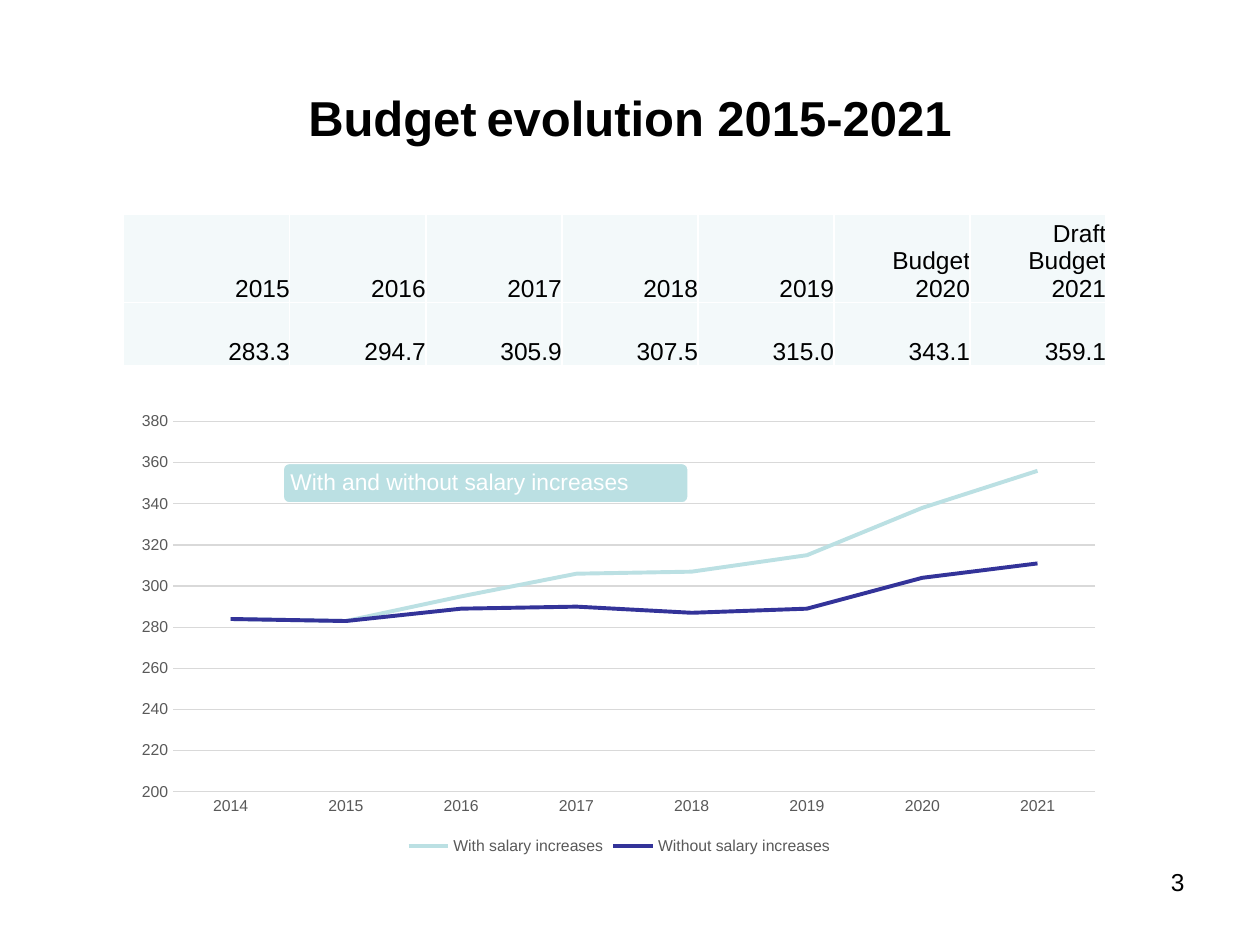
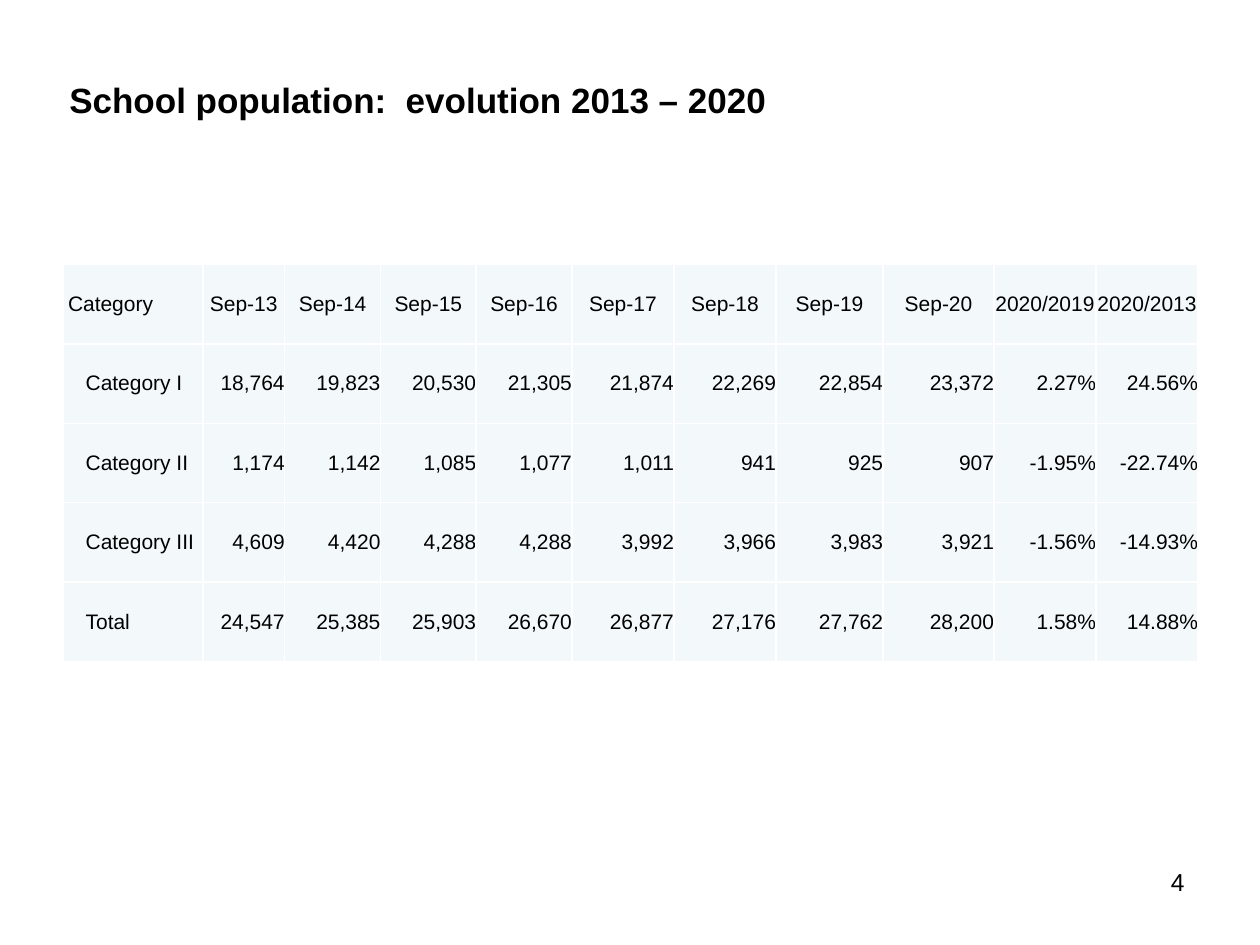
from lxml.etree import SubElement as Sub
from pptx import Presentation
from pptx.chart.data import CategoryChartData as Data
from pptx.dml.color import RGBColor
from pptx.enum.chart import XL_CHART_TYPE as Kind, XL_LEGEND_POSITION as Spot, XL_TICK_MARK as Tick
from pptx.enum.shapes import MSO_SHAPE as Form
from pptx.enum.text import MSO_ANCHOR as Anchor, PP_ALIGN as Align
from pptx.oxml import parse_xml
from pptx.oxml.ns import nsdecls, qn
from pptx.util import Inches, Pt

WIDE, HIGH = 10, 7.5
EDGE = WIDE / 20
FULL = WIDE - 2 * EDGE
FONT = "Arial"
INK, GREY, RULE, WHITE = "000000", "595959", "D9D9D9", "FFFFFF"
TINT, AQUA, NAVY = "F3F9FA", "BBE0E3", "333399"

BUDGET = [
    ["2015", "2016", "2017", "2018", "2019", "Budget 2020", "Draft Budget\n2021"],
    ["283.3", "294.7", "305.9", "307.5", "315.0", "343.1", "359.1"],
]
BADGE = "With and without salary increases"
YEARS = [str(year) for year in range(2014, 2022)]
LINES = [
    ("With salary increases", AQUA, [284, 283, 295, 306, 307, 315, 338, 356]),
    ("Without salary increases", NAVY, [284, 283, 289, 290, 287, 289, 304, 311]),
]
PUPILS = [
    ["Category", *[f"Sep-{year}" for year in range(13, 21)], "2020/2019", "2020/2013"],
    ["Category I", "18,764", "19,823", "20,530", "21,305", "21,874", "22,269",
     "22,854", "23,372", "2.27%", "24.56%"],
    ["Category II", "1,174", "1,142", "1,085", "1,077", "1,011", "941",
     "925", "907", "-1.95%", "-22.74%"],
    ["Category III", "4,609", "4,420", "4,288", "4,288", "3,992", "3,966",
     "3,983", "3,921", "-1.56%", "-14.93%"],
    ["Total", "24,547", "25,385", "25,903", "26,670", "26,877", "27,176",
     "27,762", "28,200", "1.58%", "14.88%"],
]
PLOT = {"x": 0.05, "y": 0.04, "w": 0.93, "h": 0.81}


def hue(code):
    return RGBColor.from_string(code)


def put(item, **attrs):
    for name, value in attrs.items():
        setattr(item, name, value)


def style(font, size, color=INK, bold=False):
    put(font, name=FONT, size=Pt(size), bold=bold)
    font.color.rgb = hue(color)


def box(slide, rect, runs, align, anchor, bold=False, **attrs):
    frame = slide.shapes.add_textbox(*map(Inches, rect)).text_frame
    put(frame, word_wrap=True, vertical_anchor=anchor, **attrs)
    para = frame.paragraphs[0]
    para.alignment = align
    for text, size in runs:
        run = para.add_run()
        run.text = text
        style(run.font, size, bold=bold)


def page(deck, number):
    slide = deck.slides.add_slide(deck.slide_layouts[6])
    slide.background.fill.solid()
    slide.background.fill.fore_color.rgb = hue(WHITE)
    box(slide, (7.17, 6.83, 2.33, 0.52), [(str(number), 14)], Align.RIGHT, Anchor.TOP)
    return slide


def border(cell):
    props = cell._tc.get_or_add_tcPr()
    for at, side in enumerate(("lnL", "lnR", "lnT", "lnB")):
        props.insert(at, parse_xml(
            f'<a:{side} {nsdecls("a")} w="12700"><a:solidFill>'
            f'<a:srgbClr val="{WHITE}"/></a:solidFill></a:{side}>'))


def grid(slide, left, top, cols, rows, cells, size, anchor, place):
    table = slide.shapes.add_table(
        len(rows), len(cols), *map(Inches, (left, top, sum(cols), sum(rows)))).table
    put(table, first_row=False, horz_banding=False)
    for col, width in zip(table.columns, cols):
        col.width = Inches(width)
    for r, (row, height) in enumerate(zip(cells, rows)):
        table.rows[r].height = Inches(height)
        for c, text in enumerate(row):
            cell = table.cell(r, c)
            align, inset = place(r, c)
            put(cell, text=text, vertical_anchor=anchor, margin_left=Inches(inset),
                margin_right=0, margin_top=0, margin_bottom=0)
            for para in cell.text_frame.paragraphs:
                para.alignment = align
                style(para.runs[0].font, size)
            cell.fill.solid()
            cell.fill.fore_color.rgb = hue(TINT)
            border(cell)


def badge(slide):
    shape = slide.shapes.add_shape(
        Form.ROUNDED_RECTANGLE, *map(Inches, (2.24, 3.67, 3.23, 0.33)))
    shape.shadow.inherit = False
    shape.fill.solid()
    shape.fill.fore_color.rgb = hue(AQUA)
    shape.line.color.rgb = hue(WHITE)
    shape.line.width = Pt(2)
    frame = shape.text_frame
    put(frame, text=BADGE, word_wrap=True, vertical_anchor=Anchor.MIDDLE,
        margin_left=Inches(0.05), margin_right=0, margin_top=0, margin_bottom=0)
    para = frame.paragraphs[0]
    put(para, alignment=Align.LEFT, line_spacing=0.9)
    style(para.runs[0].font, 13, WHITE)


def trend(slide):
    data = Data()
    data.categories = YEARS
    for name, color, values in LINES:
        data.add_series(name, values)
    chart = slide.shapes.add_chart(
        Kind.LINE, *map(Inches, (0.98, 3.2, 7.87, 3.63)), data).chart
    style(chart.font, 10)
    put(chart, has_title=False, has_legend=True)
    put(chart.legend, position=Spot.BOTTOM, include_in_layout=False)
    style(chart.legend.font, 9, GREY)
    chart.plots[0].vary_by_categories = False
    for series, (name, color, values) in zip(chart.plots[0].series, LINES):
        series.smooth = False
        series.format.line.color.rgb = hue(color)
        series.format.line.width = Pt(2.25)
    years, scale = chart.category_axis, chart.value_axis
    for axis in (years, scale):
        put(axis, major_tick_mark=Tick.NONE, minor_tick_mark=Tick.NONE)
        style(axis.tick_labels.font, 9, GREY)
    put(scale, minimum_scale=200, maximum_scale=380, major_unit=20)
    scale.format.line.fill.background()
    for line in (years.format.line, scale.major_gridlines.format.line):
        line.color.rgb = hue(RULE)
        line.width = Pt(0.75)
    root = chart._chartSpace.find(qn("c:chart"))
    root.addnext(parse_xml(
        f'<c:spPr {nsdecls("c", "a")}><a:noFill/><a:ln><a:noFill/></a:ln></c:spPr>'))
    area = root.find(qn("c:plotArea"))
    for old in area.findall(qn("c:layout")):
        area.remove(old)
    layout = parse_xml(f'<c:layout {nsdecls("c")}><c:manualLayout/></c:layout>')
    area.insert(0, layout)
    marks = {"layoutTarget": "inner", "xMode": "edge", "yMode": "edge", **PLOT}
    for tag, value in marks.items():
        Sub(layout[0], qn(f"c:{tag}")).set("val", str(value))


def budget(deck):
    slide = page(deck, 3)
    box(slide, (EDGE, 0.3, FULL, 1.25),
        [("Budget", 28), (" ", 20), ("evolution 2015-2021", 28)],
        Align.CENTER, Anchor.MIDDLE, True)
    badge(slide)
    trend(slide)
    grid(slide, 0.98, 1.7, [1.32] + [1.08] * 6, [0.65, 0.5], BUDGET, 14,
         Anchor.BOTTOM, lambda r, c: (Align.RIGHT, 0))


def school(deck):
    def place(r, c):
        if c == 0:
            return Align.LEFT, 0.18 if r else 0.04
        return Align.RIGHT if r else Align.CENTER, 0

    slide = page(deck, 4)
    box(slide, (EDGE, 0.49, FULL, 0.88), [("School population:  evolution 2013 – 2020", 20)],
        Align.LEFT, Anchor.TOP, True, margin_left=Inches(0.05), margin_top=Inches(0.13))
    cols = [1.11, 0.65] + [0.76] * 3 + [0.81] * 2 + [0.85, 0.88] + [0.81] * 2
    grid(slide, EDGE, 2.1, cols, [0.63] * len(PUPILS), PUPILS, 12, Anchor.MIDDLE, place)


def main():
    deck = Presentation()
    put(deck, slide_width=Inches(WIDE), slide_height=Inches(HIGH))
    budget(deck)
    school(deck)
    deck.save("out.pptx")


if __name__ == "__main__":
    main()
